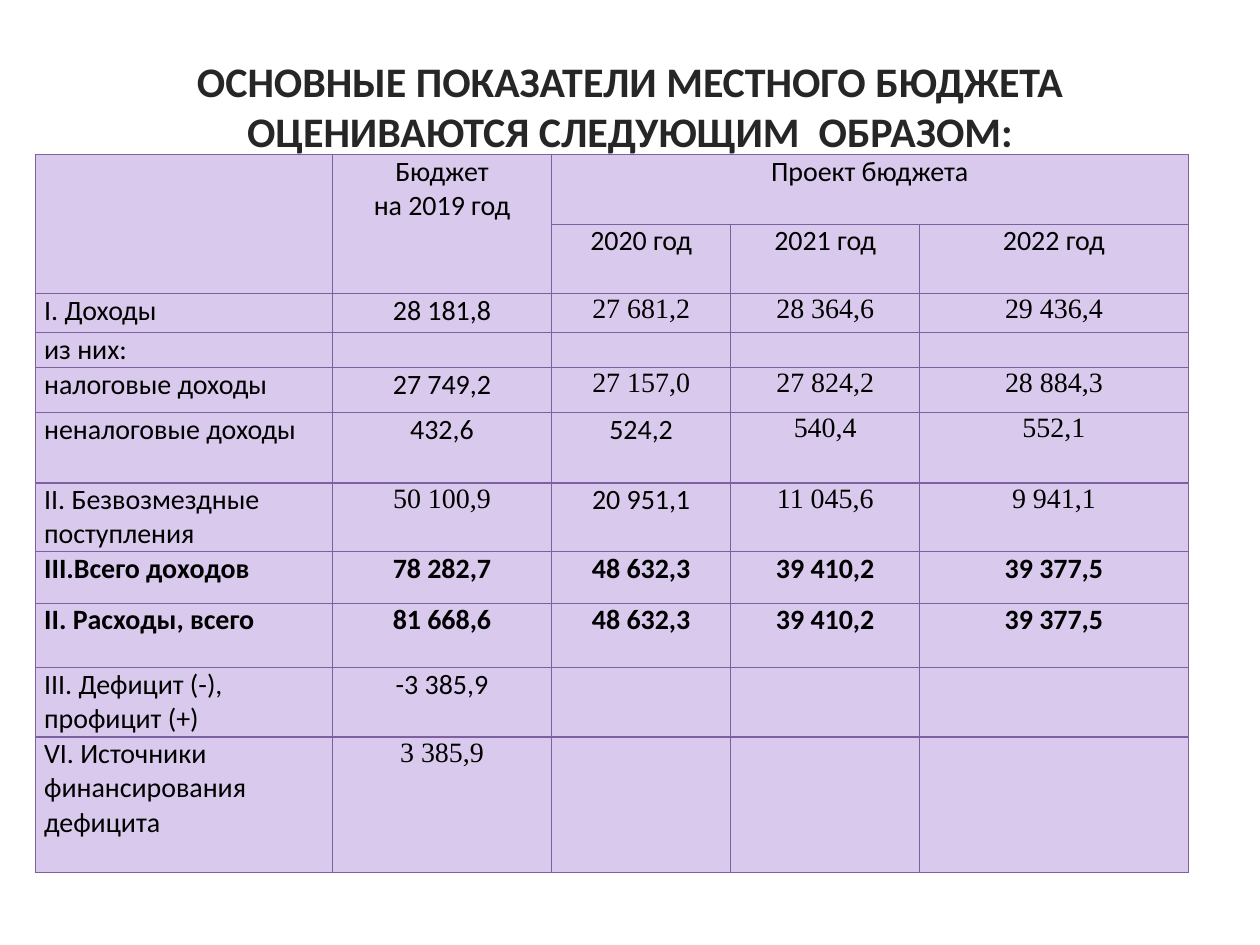
from lxml import etree
from pptx import Presentation
from pptx import util as u
from pptx.dml.color import RGBColor
from pptx.enum import text
from pptx.oxml import ns

hues = {"title": "262626", "text": "000000", "fill": "D9CAED", "line": "7D60A0"}
serif = {(2, 2), (2, 3), (2, 4), (4, 2), (4, 3), (4, 4), (5, 3), (5, 4),
         (6, 1), (6, 3), (6, 4), (10, 1)}
bold = {7, 8}
widths = [5.99, 4.42, 3.61, 3.81, 5.41]
heights = [1.4, 1.4, 0.79, 0.7, 0.91, 1.42, 1.37, 1.04, 1.3, 1.4, 2.74]
rows = [
    ["", "Бюджет\nна 2019 год", "Проект бюджета", "", ""],
    ["", "", "2020 год", "2021 год", "2022 год"],
    ["I. Доходы", "28 181,8", "27 681,2", "28 364,6", "29 436,4"],
    ["из них:", "", "", "", ""],
    ["налоговые доходы", "27 749,2", "27 157,0", "27 824,2", "28 884,3"],
    ["неналоговые доходы", "432,6", "524,2", "540,4", "552,1"],
    ["II. Безвозмездные поступления", "50 100,9", "20 951,1", "11 045,6", "9 941,1"],
    ["III.Всего доходов", "78 282,7", "48 632,3", "39 410,2", "39 377,5"],
    ["II. Расходы, всего", "81 668,6", "48 632,3", "39 410,2", "39 377,5"],
    ["III. Дефицит (-), профицит (+)", "-3 385,9", "", "", ""],
    ["VI. Источники финансирования дефицита", "3 385,9", "", "", ""],
]


def style(para, face, size, hue, heavy, align):
    para.alignment = align
    para.font.name = face
    para.font.size = u.Pt(size)
    para.font.bold = heavy
    para.font.color.rgb = RGBColor.from_string(hues[hue])


def border(cell):
    props = cell._tc.get_or_add_tcPr()
    for side in ("a:lnL", "a:lnR", "a:lnT", "a:lnB"):
        line = etree.SubElement(props, ns.qn(side), w=str(u.Pt(0.75)))
        paint = etree.SubElement(line, ns.qn("a:solidFill"))
        etree.SubElement(paint, ns.qn("a:srgbClr"), val=hues["line"])


deck = Presentation()
deck.slide_width, deck.slide_height = u.Cm(25.4), u.Cm(19.05)
slide = deck.slides.add_slide(deck.slide_layouts[5])

title = slide.shapes.title
title.left, title.top = u.Cm(1.27), u.Cm(0.33)
title.width, title.height = u.Cm(22.86), u.Cm(3.6)
frame = title.text_frame
frame.text = "ОСНОВНЫЕ ПОКАЗАТЕЛИ МЕСТНОГО БЮДЖЕТА ОЦЕНИВАЮТСЯ СЛЕДУЮЩИМ  ОБРАЗОМ:"
frame.auto_size = text.MSO_AUTO_SIZE.NONE
frame.vertical_anchor = text.MSO_ANCHOR.MIDDLE
style(frame.paragraphs[0], "Calibri", 24, "title", True, text.PP_ALIGN.CENTER)

table = slide.shapes.add_table(
    len(rows), len(widths), u.Cm(0.71), u.Cm(3.12),
    u.Cm(sum(widths)), u.Cm(sum(heights))).table
table.first_row = table.horz_banding = False
for col, width in zip(table.columns, widths):
    col.width = u.Cm(width)
for row, height in zip(table.rows, heights):
    row.height = u.Cm(height)

for r, row in enumerate(rows):
    for c, value in enumerate(row):
        cell = table.cell(r, c)
        cell.text = value
        cell.margin_left = cell.margin_right = u.Cm(0.18)
        cell.margin_top = cell.margin_bottom = 0
        border(cell)
        cell.fill.solid()
        cell.fill.fore_color.rgb = RGBColor.from_string(hues["fill"])
        face = "Times New Roman" if (r, c) in serif else "Calibri"
        align = text.PP_ALIGN.CENTER if c else text.PP_ALIGN.LEFT
        for para in cell.text_frame.paragraphs:
            style(para, face, 16, "text", r in bold, align)

for first, last in (((0, 0), (1, 0)), ((0, 1), (1, 1)), ((0, 2), (0, 4))):
    table.cell(*first).merge(table.cell(*last))

deck.save("out.pptx")
